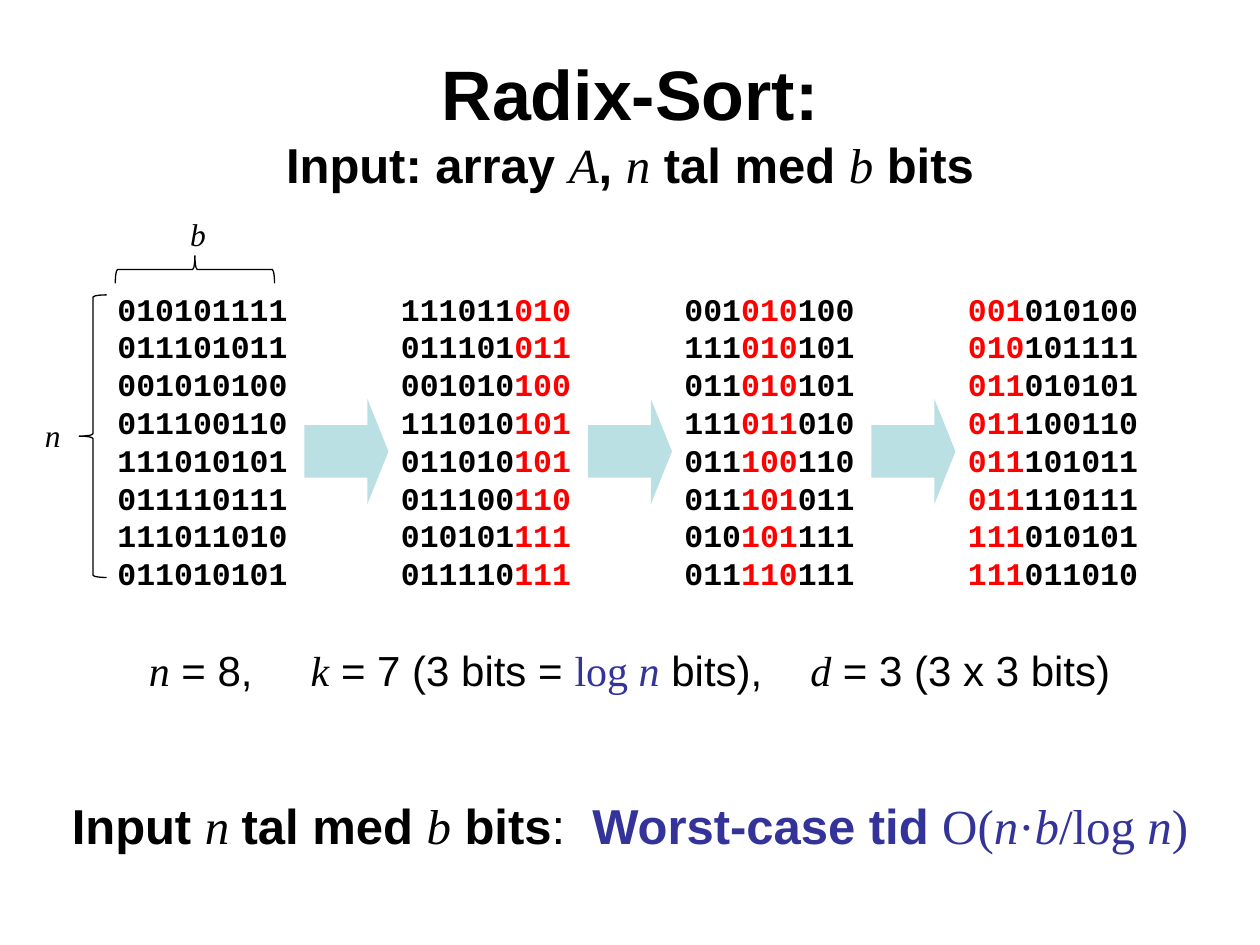
from lxml import etree
from pptx import Presentation
from pptx.dml.color import RGBColor
from pptx.enum.shapes import MSO_SHAPE
from pptx.enum.text import MSO_ANCHOR, MSO_AUTO_SIZE, PP_ALIGN
from pptx.oxml.ns import qn
from pptx.util import Pt

ARROW, BRACE = MSO_SHAPE.RIGHT_ARROW, MSO_SHAPE.LEFT_BRACE
MIDDLE = MSO_ANCHOR.MIDDLE
GROW, FIXED = MSO_AUTO_SIZE.SHAPE_TO_FIT_TEXT, MSO_AUTO_SIZE.NONE
LEFT, CENTER = PP_ALIGN.LEFT, PP_ALIGN.CENTER

BLACK, RED, BLUE, TEAL = "000000", "FF0000", "333399", "BBE0E3"
BOLD = dict(bold=True)
MATH = dict(font="Times New Roman")
VAR = dict(MATH, italic=True)

WORDS = ["010101111", "011101011", "001010100", "011100110",
         "111010101", "011110111", "111011010", "011010101"]
DIGIT = 3
FIRST, STEP = 60, 162


def paint(color):
    return RGBColor.from_string(color)


def write(para, text, size=18, font="Arial", color=BLACK, bold=False, italic=False):
    run = para.add_run()
    run.text = text
    face = run.font
    face.size, face.name = Pt(size), font
    face.bold, face.italic = bold, italic
    face.color.rgb = paint(color)


def write_all(para, size, runs):
    for text, style in runs:
        write(para, text, size=size, **style)


def add_box(slide, left, top, width, height, wrap=True):
    box = slide.shapes.add_textbox(Pt(left), Pt(top), Pt(width), Pt(height))
    frame = box.text_frame
    frame.word_wrap, frame.auto_size = wrap, GROW
    return frame


def add_shape(slide, kind, left, top, width, height, fill=None, turn=0):
    """Add a filled shape without a line, or an outlined one without a fill."""
    shape = slide.shapes.add_shape(kind, Pt(left), Pt(top), Pt(width), Pt(height))
    shape.shadow.inherit = False
    shape.rotation = turn
    if fill:
        shape.fill.solid()
        shape.fill.fore_color.rgb = paint(fill)
        shape.line.fill.background()
    else:
        shape.fill.background()
        shape.line.color.rgb = paint(BLACK)
        shape.line.width = Pt(0.75)
    return shape


def add_title(slide):
    title = slide.shapes.title
    title.left, title.top, title.width, title.height = Pt(54), Pt(24), Pt(612), Pt(91.5)
    frame = title.text_frame
    frame.auto_size, frame.vertical_anchor = FIXED, MIDDLE
    para = frame.paragraphs[0]
    para.alignment = CENTER
    write(para, "Radix-Sort:", size=40, bold=True)
    para.add_line_break()
    write_all(para, 28, [
        ("Input: array ", BOLD), ("A", VAR), (", ", BOLD), ("n", VAR),
        (" tal med ", BOLD), ("b", VAR), (" bits", BOLD)])


def add_column(slide, left, words, start, end):
    """List the words, with the bits from start to end in red."""
    frame = add_box(slide, left, 162, 120, 180)
    for row, word in enumerate(words):
        para = frame.add_paragraph() if row else frame.paragraphs[0]
        parts = (word[:start], BLACK), (word[start:end], RED), (word[end:], BLACK)
        for bits, color in parts:
            if bits:
                write(para, bits, font="Courier New", color=color, bold=True)


def add_passes(slide):
    words = WORDS
    add_column(slide, FIRST, words, 0, 0)
    for step, start in enumerate((6, 3, 0)):
        end = start + DIGIT
        words = sorted(words, key=lambda word: word[start:end])
        left = FIRST + STEP * step
        arrow = add_shape(slide, ARROW, left + 114, 228, 48, 60, fill=TEAL)
        arrow.adjustments[0], arrow.adjustments[1] = 0.5, 0.25
        add_column(slide, left + STEP, words, start, end)


def add_label(slide, text, left, top):
    frame = add_box(slide, left, top, 24, 29, wrap=False)
    write(frame.paragraphs[0], text, **VAR)


def set_tabs(para, stops):
    tabs = etree.SubElement(para._p.get_or_add_pPr(), qn("a:tabLst"))
    for stop in stops:
        etree.SubElement(tabs, qn("a:tab"), pos=str(Pt(stop)), algn="l")


def add_result(slide):
    frame = add_box(slide, 0, 365, 720, 130)
    para = frame.paragraphs[0]
    para.alignment = LEFT
    set_tabs(para, (78, 170.5, 456))
    write_all(para, 24, [
        ("\t", {}), ("n", VAR), (" = 8,\t", {}), ("k", VAR),
        (" = 7 (3 bits = ", {}), ("log ", dict(MATH, color=BLUE)),
        ("n", dict(VAR, color=BLUE)), (" bits),\t", {}), ("d", VAR),
        (" = 3 (3 x 3 bits)", {})])

    para = frame.add_paragraph()
    para.alignment = CENTER
    para.space_before = Pt(57)
    write_all(para, 28, [
        ("Input ", BOLD), ("n ", VAR), ("tal med ", BOLD), ("b", VAR),
        (" bits", BOLD), (":  ", {}), ("Worst-case tid ", dict(BOLD, color=BLUE))])
    for text in ("O(", "n", "·", "b", "/log ", "n", ")"):
        style = VAR if text in ("n", "b") else MATH
        write(para, text, size=28, color=BLUE, **style)


def main():
    deck = Presentation()
    deck.slide_width, deck.slide_height = Pt(720), Pt(540)
    slide = deck.slides.add_slide(deck.slide_layouts[0])
    spare = slide.placeholders[1].element
    spare.getparent().remove(spare)

    add_title(slide)
    add_passes(slide)
    add_result(slide)
    add_shape(slide, BRACE, 45.25, 168.5, 15.75, 161.5)
    add_shape(slide, BRACE, 103.5, 108.5, 15.75, 91, turn=90)
    add_label(slide, "n", 18.5, 234)
    add_label(slide, "b", 101.5, 119.5)
    deck.save("out.pptx")


if __name__ == "__main__":
    main()
